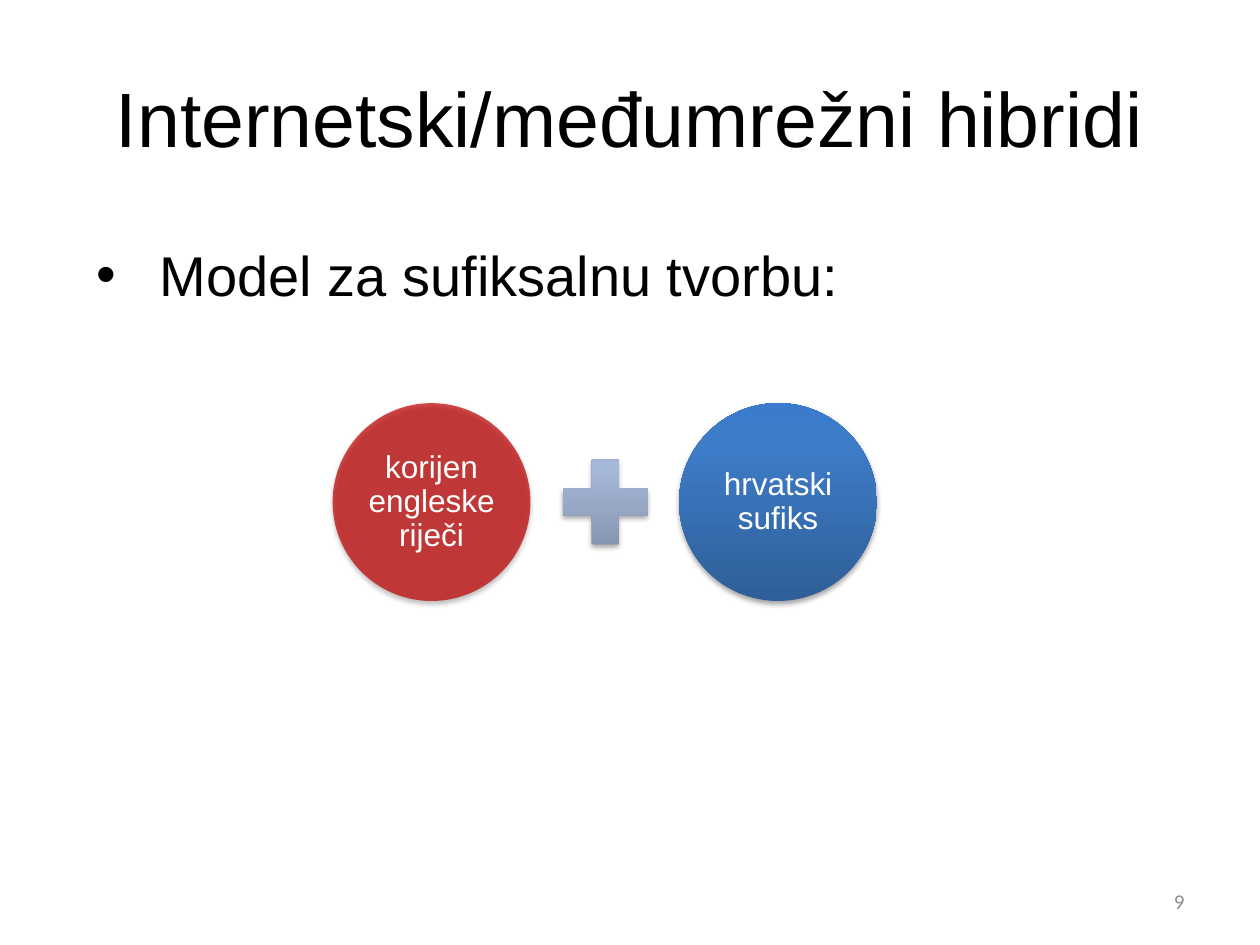
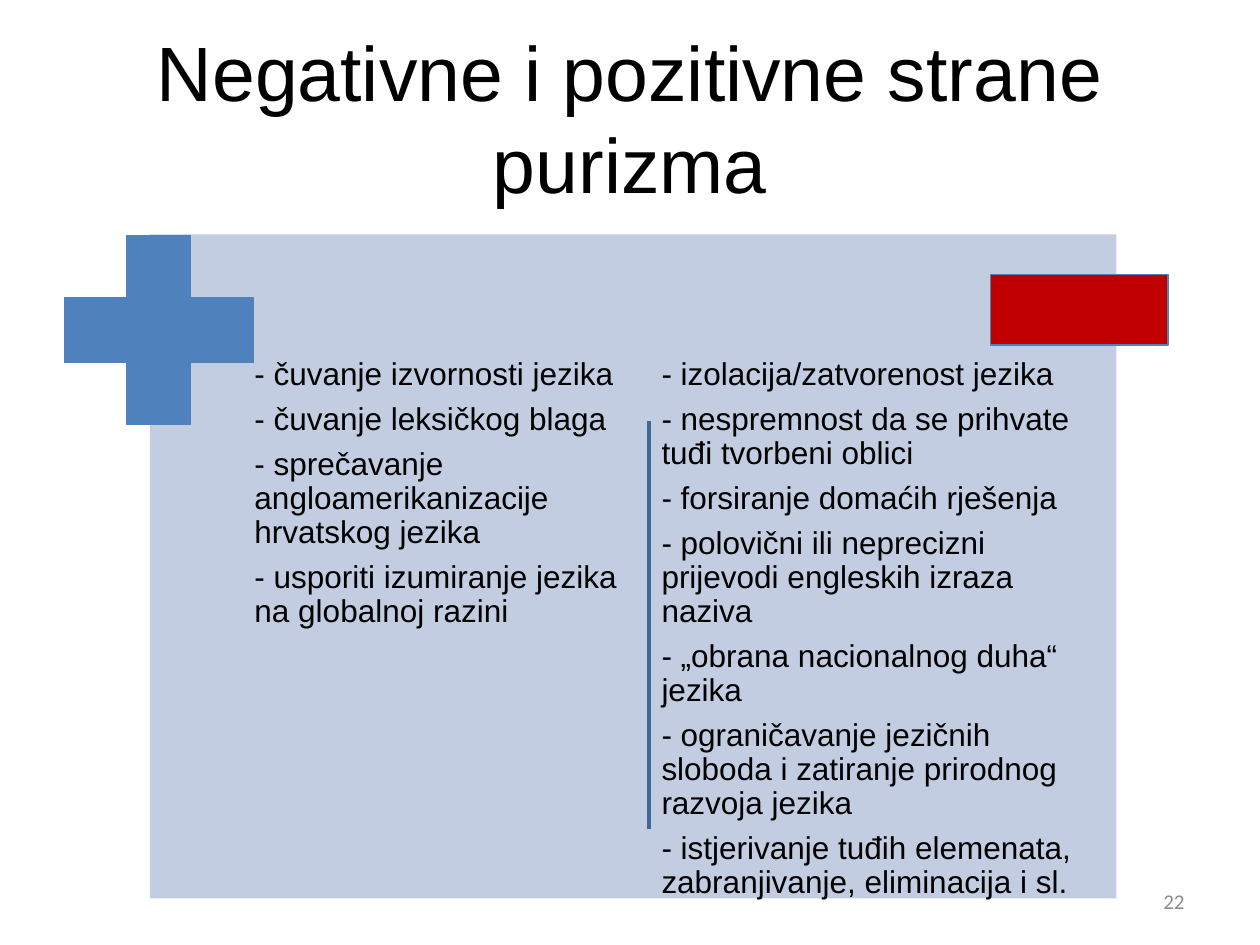
import pptx
import pptx.dml.color
import pptx.enum.shapes
import pptx.enum.text
import pptx.oxml
import pptx.oxml.ns
import pptx.util
from lxml import etree

Inches = pptx.util.Inches
Pt = pptx.util.Pt
Shape = pptx.enum.shapes.MSO_SHAPE
Align = pptx.enum.text.PP_ALIGN
Anchor = pptx.enum.text.MSO_ANCHOR
qn = pptx.oxml.ns.qn

COLORS = {
    "black": "000000", "white": "FFFFFF", "gray": "8C8C8C", "red": "C00000",
    "blue": "4F81BD", "panel": "C2CDE1", "divider": "3F6797",
}
PLUS_GRADIENT = [(0, "818FA8"), (80, "A7B9DA"), (100, "A7BADC")]
BLUE_GRADIENT = [(0, "2F5F99"), (80, "3D7CC7"), (100, "3A7CCB")]
DIAGRAM_PARAGRAPH = {"line_spacing": 0.9, "space_after": Pt(6.3)}
CENTERED = {"alignment": Align.CENTER}
MIDDLE = {"vertical_anchor": Anchor.MIDDLE}

POSITIVE_SIDES = [
    "- čuvanje izvornosti jezika",
    "- čuvanje leksičkog blaga",
    "- sprečavanje angloamerikanizacije hrvatskog jezika",
    "- usporiti izumiranje jezika na globalnoj razini",
]
NEGATIVE_SIDES = [
    "- izolacija/zatvorenost jezika",
    "- nespremnost da se prihvate tuđi tvorbeni oblici",
    "- forsiranje domaćih rješenja",
    "- polovični ili neprecizni prijevodi engleskih izraza naziva",
    "- „obrana nacionalnog duha“ jezika",
    "- ograničavanje jezičnih sloboda i zatiranje prirodnog razvoja jezika",
    "- istjerivanje tuđih elemenata, zabranjivanje, eliminacija i sl.",
]


def rgb(name):
    return pptx.dml.color.RGBColor.from_string(COLORS[name])


def apply_format(target, values):
    for name, value in values.items():
        setattr(target, name, value)


def add_xml(parent, tag, **attributes):
    return etree.SubElement(parent, qn(tag), {key: str(value) for key, value in attributes.items()})


class Deck:
    def __init__(self):
        self.presentation = pptx.Presentation()
        self.presentation.slide_width = Inches(10)
        self.presentation.slide_height = Inches(7.5)
        self.slide = None

    def add_slide(self, title, number):
        self.slide = self.presentation.slides.add_slide(self.presentation.slide_layouts[6])
        self.add_text((0.5, 0.3, 9, 1.25), [title], 44, paragraph_format=CENTERED, frame_format=MIDDLE)
        self.add_text((7.17, 6.95, 2.33, 0.4), [number], 12, "gray", "Calibri",
                      {"alignment": Align.RIGHT}, MIDDLE)

    def add_text(self, box, lines, size, color="black", font="Arial",
                 paragraph_format=None, frame_format=None, margin=None):
        shape = self.slide.shapes.add_textbox(*map(Inches, box))
        frame = shape.text_frame
        frame.word_wrap = True
        apply_format(frame, frame_format or {})
        if margin is not None:
            sides = ("left", "top", "right", "bottom")
            apply_format(frame, {f"margin_{side}": Inches(margin) for side in sides})
        frame.text = "\n".join(lines)
        for paragraph in frame.paragraphs:
            apply_format(paragraph, paragraph_format or {})
            run_font = paragraph.runs[0].font
            apply_format(run_font, {"size": Pt(size), "name": font})
            run_font.color.rgb = rgb(color)
        return shape

    def add_bullet(self, box, text, size):
        paragraph = self.add_text(box, [text], size).text_frame.paragraphs[0]
        properties = paragraph._p.get_or_add_pPr()
        properties.set("marL", str(Inches(0.5)))
        properties.set("indent", str(-Inches(0.5)))
        add_xml(properties, "a:buFont", typeface="Arial")
        add_xml(properties, "a:buChar", char="•")

    def add_shape(self, kind, box, color=None, gradient=None, alpha=None, line=None, shadow=False):
        shape = self.slide.shapes.add_shape(kind, *map(Inches, box))
        shape.shadow.inherit = False
        properties = shape._element.spPr
        if gradient:
            shape.fill.gradient()
            shape.fill.gradient_angle = 90
            stops = properties.find(qn("a:gradFill")).find(qn("a:gsLst"))
            for stop in list(stops):
                stops.remove(stop)
            for position, stop_color in gradient:
                stop = add_xml(stops, "a:gs", pos=position * 1000)
                add_xml(stop, "a:srgbClr", val=stop_color)
        else:
            shape.fill.solid()
            shape.fill.fore_color.rgb = rgb(color)
        if alpha:
            fill_color = properties.find(qn("a:solidFill")).find(qn("a:srgbClr"))
            add_xml(fill_color, "a:alpha", val=alpha * 1000)
        if line:
            shape.line.color.rgb = rgb(line)
            shape.line.width = Pt(0.75)
        else:
            shape.line.fill.background()
        if shadow:
            outer = add_xml(properties.find(qn("a:effectLst")), "a:outerShdw", blurRad=Pt(3.1),
                            dist=Pt(1.8), dir=90 * 60000, rotWithShape=0)
            add_xml(add_xml(outer, "a:srgbClr", val=COLORS["black"]), "a:alpha", val=35000)
        return shape

    def add_circle(self, left, text, **fill):
        top, diameter, inset = 3.2, 1.57, 0.23
        self.add_shape(Shape.OVAL, (left, top, diameter, diameter), shadow=True, **fill)
        side = diameter - 2 * inset
        self.add_text((left + inset, top + inset, side, side), [text], 18, "white",
                      paragraph_format={**DIAGRAM_PARAGRAPH, **CENTERED},
                      frame_format=MIDDLE, margin=0.03)

    def add_column(self, box, lines):
        self.add_text(box, lines, 18, paragraph_format=DIAGRAM_PARAGRAPH, margin=0.04)

    def add_line(self, start, end, color, width):
        connector = self.slide.shapes.add_connector(
            pptx.enum.shapes.MSO_CONNECTOR.STRAIGHT, *map(Inches, start + end))
        connector.line.color.rgb = rgb(color)
        connector.line.width = Pt(width)
        add_xml(connector._element.spPr, "a:effectLst")


def build_hybrids(deck):
    deck.add_slide("Internetski/međumrežni hibridi", "9")
    deck.add_bullet((0.67, 1.86, 7.8, 0.94), "Model za sufiksalnu tvorbu:", 32)
    deck.add_circle(2.64, "korijen engleske riječi", color="red", alpha=71)
    deck.add_shape(Shape.MATH_PLUS, (4.35, 3.53, 0.91, 0.91), gradient=PLUS_GRADIENT, shadow=True)
    deck.add_circle(5.39, "hrvatski sufiks", gradient=BLUE_GRADIENT)


def build_purism(deck):
    deck.add_slide("Negativne i pozitivne strane purizma", "22")
    deck.add_shape(Shape.RECTANGLE, (1.19, 1.86, 7.67, 5.27), "panel")
    deck.add_column((1.98, 2.8, 3.06, 4.06), POSITIVE_SIDES)
    deck.add_column((5.21, 2.8, 3.51, 4.29), NEGATIVE_SIDES)
    plus = deck.add_shape(Shape.CROSS, (0.51, 1.87, 1.5, 1.5), "blue", line="blue")
    plus.adjustments[0] = 0.33
    deck.add_shape(Shape.RECTANGLE, (7.86, 2.18, 1.41, 0.56), "red", line="blue")
    deck.add_line((5.15, 3.34), (5.15, 6.58), "divider", 2)


def main():
    deck = Deck()
    build_hybrids(deck)
    build_purism(deck)
    deck.presentation.save("out.pptx")


if __name__ == "__main__":
    main()
